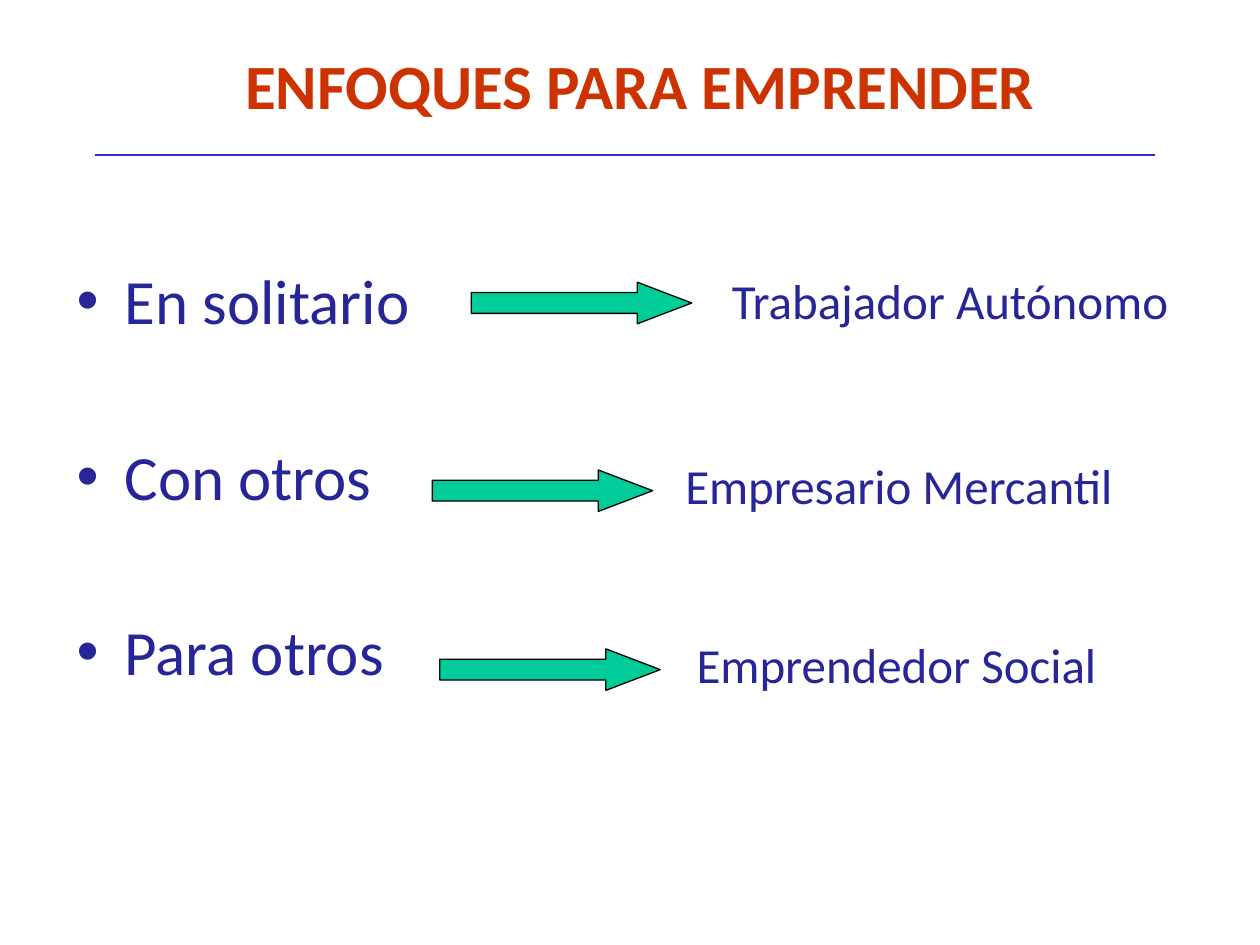
from lxml import etree
from pptx import Presentation
from pptx.dml.color import RGBColor
from pptx.enum import shapes, text
from pptx.oxml import ns
from pptx.util import Inches, Pt

COLORS = {
    "title": "CC3300",
    "body": "262699",
    "rule": "3333CC",
    "arrow": "00CC99",
    "outline": "000000",
}
FONT = "Calibri"

# approach, arrow (left, top), outcome, outcome box (left, top, width)
APPROACHES = [
    ("En solitario", (3.74, 2.24), "Trabajador Autónomo", (5.71, 2.1, 3.74)),
    ("Con otros", (3.43, 3.73), "Empresario Mercantil", (5.34, 3.57, 3.65)),
    ("Para otros", (3.49, 5.15), "Emprendedor Social", (5.43, 4.99, 3.41)),
]


def color(name):
    return RGBColor.from_string(COLORS[name])


def style(para, size, name, bold=False):
    para.font.name = FONT
    para.font.size = Pt(size)
    para.font.bold = bold
    para.font.color.rgb = color(name)


def add_bullet(para, indent):
    props = para._p.get_or_add_pPr()
    props.set("marL", str(indent))
    props.set("indent", str(-indent))
    etree.SubElement(props, ns.qn("a:buFont")).set("typeface", "Arial")
    etree.SubElement(props, ns.qn("a:buChar")).set("char", "•")


def place_title(page, left, top, width, height):
    title = page.shapes.title
    title.left, title.top = Inches(left), Inches(top)
    title.width, title.height = Inches(width), Inches(height)
    frame = title.text_frame
    frame.text = "ENFOQUES PARA EMPRENDER"
    frame.vertical_anchor = text.MSO_ANCHOR.MIDDLE
    para = frame.paragraphs[0]
    para.alignment = text.PP_ALIGN.CENTER
    style(para, 36, "title", bold=True)


def add_rule(page, left, top, width):
    rule = page.shapes.add_connector(
        shapes.MSO_CONNECTOR.STRAIGHT,
        Inches(left), Inches(top), Inches(left + width), Inches(top))
    rule.line.color.rgb = color("rule")
    rule.line.width = Pt(0.75)
    etree.SubElement(rule._element.spPr, ns.qn("a:effectLst"))


def add_approaches(page, left, top, width, height):
    box = page.shapes.add_textbox(
        Inches(left), Inches(top), Inches(width), Inches(height))
    frame = box.text_frame
    frame.word_wrap = True
    for index, (approach, *_) in enumerate(APPROACHES):
        para = frame.add_paragraph() if index else frame.paragraphs[0]
        para.text = approach
        if index:
            para.space_before = Pt(57)
        add_bullet(para, Inches(0.38))
        style(para, 36, "body")


def add_arrow(page, left, top, width=1.75, height=0.33):
    arrow = page.shapes.add_shape(
        shapes.MSO_SHAPE.RIGHT_ARROW,
        Inches(left), Inches(top), Inches(width), Inches(height))
    arrow.adjustments[0] = 0.5
    arrow.adjustments[1] = 1.31
    arrow.shadow.inherit = False
    arrow.fill.solid()
    arrow.fill.fore_color.rgb = color("arrow")
    arrow.line.color.rgb = color("outline")
    arrow.line.width = Pt(0.75)


def add_outcome(page, outcome, left, top, width, height=0.57):
    box = page.shapes.add_textbox(
        Inches(left), Inches(top), Inches(width), Inches(height))
    frame = box.text_frame
    frame.word_wrap = False
    frame.auto_size = text.MSO_AUTO_SIZE.SHAPE_TO_FIT_TEXT
    para = frame.paragraphs[0]
    para.text = outcome
    style(para, 28, "body")


def main():
    deck = Presentation()
    deck.slide_width, deck.slide_height = Inches(10), Inches(7.5)
    page = deck.slides.add_slide(deck.slide_layouts.get_by_name("Title Only"))

    # Heading
    add_rule(page, 0.75, 1.23, 8.42)
    place_title(page, 0.83, 0.21, 8.5, 0.92)

    # Approaches, each pointing to its outcome
    add_approaches(page, 0.51, 2.03, 8.5, 3.58)
    for _, arrow_place, outcome, outcome_place in APPROACHES:
        add_arrow(page, *arrow_place)
        add_outcome(page, outcome, *outcome_place)

    deck.save("out.pptx")


if __name__ == "__main__":
    main()
